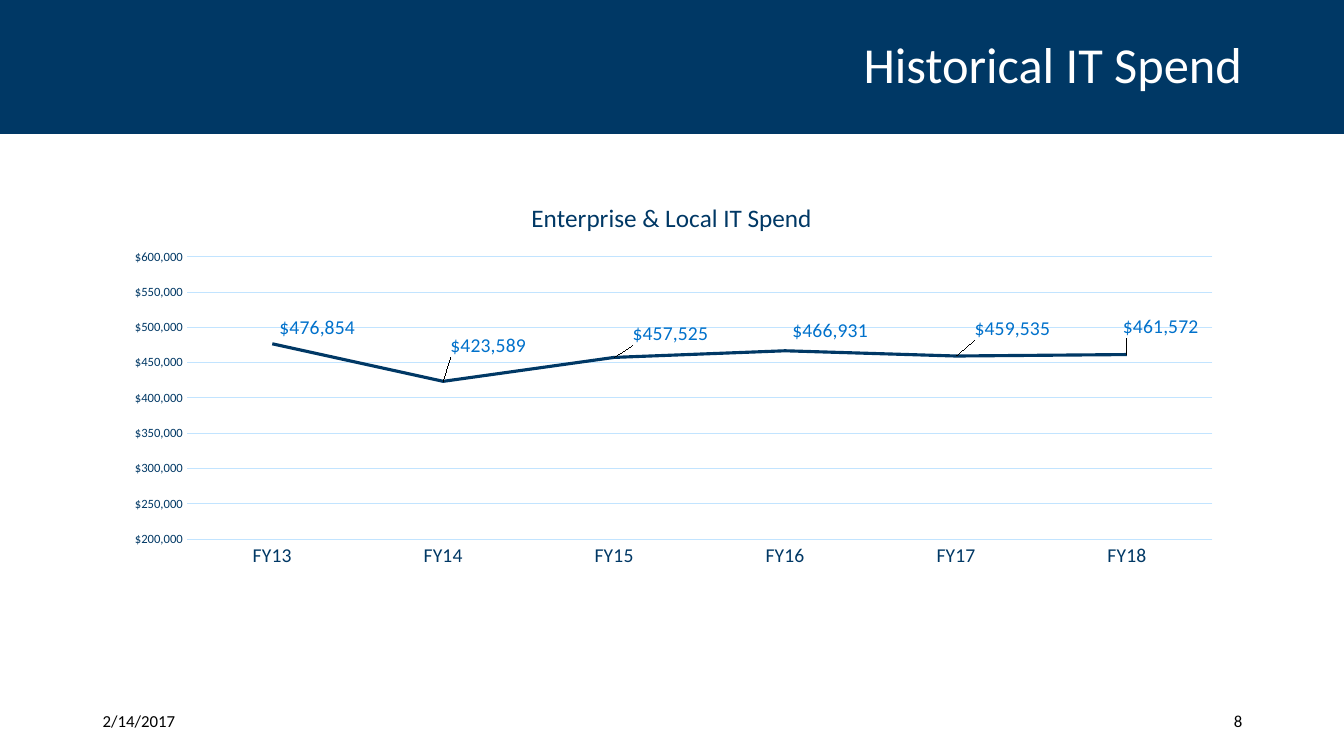
from lxml import etree
from pptx import Presentation
from pptx import util as u
from pptx.chart.data import CategoryChartData
from pptx.dml.color import RGBColor
from pptx.enum import chart as charts, shapes, text
from pptx.oxml import parse_xml
from pptx.oxml.ns import nsdecls

COLORS = {"navy": "003865", "blue": "0071CB", "pale": "C2E4FF",
          "white": "FFFFFF", "black": "000000"}
FONT = "Calibri"
MARGIN = 0.92
DOLLARS = '"$"#,##0'


def set_font(font, size, color):
    font.name, font.size, font.bold = FONT, u.Pt(size), False
    font.color.rgb = RGBColor.from_string(COLORS[color])


def write(shape, words, size, color, align=text.PP_ALIGN.LEFT, spacing=1.0):
    frame = shape.text_frame
    frame.word_wrap = True
    frame.auto_size = text.MSO_AUTO_SIZE.NONE
    frame.vertical_anchor = text.MSO_ANCHOR.MIDDLE
    paragraph = frame.paragraphs[0]
    paragraph.alignment, paragraph.line_spacing = align, spacing
    run = paragraph.add_run()
    run.text = words
    set_font(run.font, size, color)


presentation = Presentation()
presentation.slide_width, presentation.slide_height = u.Inches(13.33), u.Inches(7.5)
slide = presentation.slides.add_slide(presentation.slide_layouts[5])

# Header band, behind the title
band = slide.shapes.add_shape(shapes.MSO_SHAPE.RECTANGLE, 0, 0,
                              presentation.slide_width, u.Inches(1.33))
band.shadow.inherit = False
band.fill.solid()
band.fill.fore_color.rgb = RGBColor.from_string(COLORS["navy"])
band.line.fill.background()
slide.shapes.title._element.addprevious(band._element)

# Title
title = slide.shapes.title
title.left, title.top = u.Inches(MARGIN), u.Inches(0.17)
title.width, title.height = u.Inches(11.5), u.Inches(1)
write(title, "Historical IT Spend", 36, "white", text.PP_ALIGN.RIGHT, 0.9)

# Footer: date and page number
for words, left, width, align in [
        ("2/14/2017", MARGIN, 1.49, text.PP_ALIGN.LEFT),
        ("8", 10.82, 1.6, text.PP_ALIGN.RIGHT)]:
    box = slide.shapes.add_textbox(u.Inches(left), u.Inches(6.95),
                                   u.Inches(width), u.Inches(0.4))
    write(box, words, 12, "black", align)

# Line chart: year, spend, label shift as shares of the chart's size
spending = [("FY13", 476854, 0.04, 0), ("FY14", 423589, 0.04, -0.05),
            ("FY15", 457525, 0.05, -0.02), ("FY16", 466931, 0.04, -0.01),
            ("FY17", 459535, 0.05, -0.03), ("FY18", 461572, 0.03, -0.03)]
data = CategoryChartData(number_format=DOLLARS)
data.categories = [row[0] for row in spending]
data.add_series("Enterprise & Local IT Spend", [row[1] for row in spending])
chart = slide.shapes.add_chart(
    charts.XL_CHART_TYPE.LINE, u.Inches(1.07), u.Inches(1.81),
    u.Inches(11.18), u.Inches(3.89), data).chart
set_font(chart.font, 10, "navy")
chart.has_legend = False
chart.has_title = True
heading = chart.chart_title.text_frame.paragraphs[0].add_run()
heading.text = "Enterprise & Local IT Spend"
set_font(heading.font, 18, "navy")

# Axes and gridlines
years, dollars = chart.category_axis, chart.value_axis
for axis, size in [(years, 14), (dollars, 9)]:
    axis.major_tick_mark = axis.minor_tick_mark = charts.XL_TICK_MARK.NONE
    set_font(axis.tick_labels.font, size, "navy")
dollars.minimum_scale, dollars.maximum_scale = 200000, 600000
dollars.major_unit = 50000
dollars.tick_labels.number_format = DOLLARS
dollars.tick_labels.number_format_is_linked = False
dollars.format.line.fill.background()
for line in [years.format.line, dollars.major_gridlines.format.line]:
    line.color.rgb = RGBColor.from_string(COLORS["pale"])
    line.width = u.Pt(0.75)

# Spend line
plot = chart.plots[0]
plot.vary_by_categories = False
series = plot.series[0]
series.smooth = False
series.marker.style = charts.XL_MARKER_STYLE.NONE
series.format.line.color.rgb = RGBColor.from_string(COLORS["navy"])
series.format.line.width = u.Pt(2.25)

# Value labels, shifted from their place above each point
labels = series.data_labels
labels.show_value = True
labels.number_format, labels.number_format_is_linked = DOLLARS, False
labels.position = charts.XL_LABEL_POSITION.ABOVE
set_font(labels.font, 14, "blue")
for index, (year, spend, shift_x, shift_y) in enumerate(spending):
    label = series.points[index].data_label
    set_font(label.font, 14, "blue")
    label.position = charts.XL_LABEL_POSITION.ABOVE
    mark = series._element.xpath(f"c:dLbls/c:dLbl/c:idx[@val='{index}']")[0]
    number_format = parse_xml(f"<c:numFmt {nsdecls('c')} sourceLinked='0'/>")
    number_format.set("formatCode", DOLLARS)
    mark.addnext(number_format)
    mark.addnext(parse_xml(
        f"<c:layout {nsdecls('c')}><c:manualLayout>"
        f"<c:x val='{shift_x}'/><c:y val='{shift_y}'/>"
        "</c:manualLayout></c:layout>"))

# Plot area as shares of the chart
plot_area = chart._chartSpace.chart.plotArea
for old_layout in plot_area.xpath("c:layout"):
    plot_area.remove(old_layout)
layout = parse_xml(f"<c:layout {nsdecls('c')}><c:manualLayout>"
                   "<c:layoutTarget val='inner'/><c:xMode val='edge'/>"
                   "<c:yMode val='edge'/></c:manualLayout></c:layout>")
for name, share in [("x", 0.07), ("y", 0.19), ("w", 0.91), ("h", 0.72)]:
    etree.SubElement(layout[0], layout.tag.replace("layout", name)).set("val", str(share))
plot_area.insert(0, layout)

presentation.save("out.pptx")
